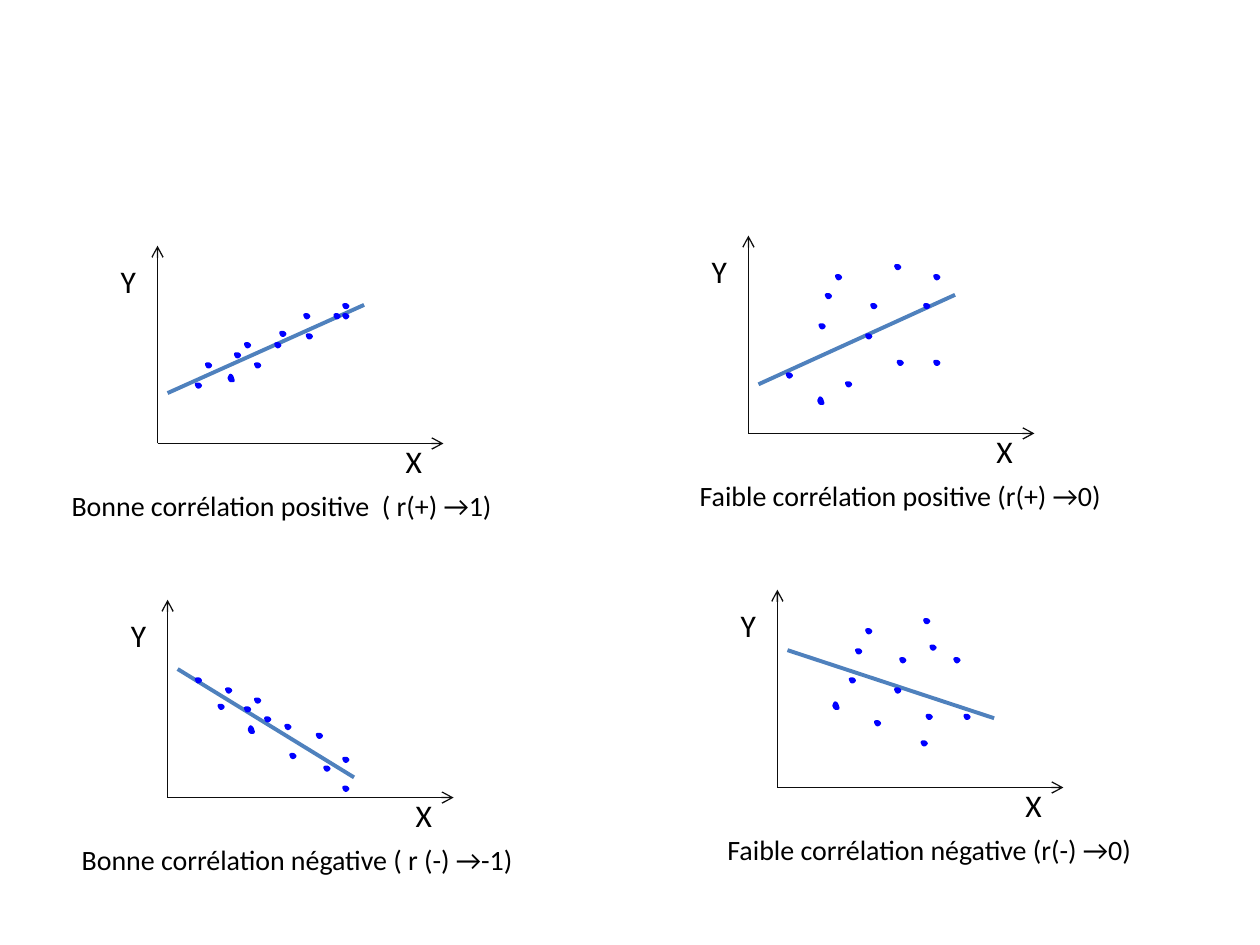
import pptx
import pptx.dml.color
import pptx.enum.shapes
import pptx.enum.text
import pptx.oxml
import pptx.oxml.ns
import pptx.util

Inches = pptx.util.Inches
Pt = pptx.util.Pt
RGB = pptx.dml.color.RGBColor.from_string
Align = pptx.enum.text.PP_ALIGN

theme = {
    "font": "Calibri",
    "text": RGB("000000"),
    "axis": RGB("0D0D0D"),
    "trend": RGB("4F81BD"),
    "dot": RGB("0000FF"),
    "label": Pt(18),
    "note": Pt(16),
    "thin": Pt(0.75),
    "thick": Pt(2.25),
    "edge": Pt(2),
}

deck = pptx.Presentation()
deck.slide_width = Inches(10)
deck.slide_height = Inches(7.5)
slide = deck.slides.add_slide(deck.slide_layouts[6])


def draw_line(start, end, color, width, arrow=False):
    ends = [Inches(n) for n in (*start, *end)]
    line = slide.shapes.add_connector(pptx.enum.shapes.MSO_CONNECTOR.STRAIGHT, *ends)
    line.line.color.rgb = color
    line.line.width = width
    if arrow:
        head = pptx.oxml.parse_xml(
            f'<a:tailEnd {pptx.oxml.ns.nsdecls("a")} type="arrow"/>')
        line.line._get_or_add_ln().append(head)
    line._element.spPr.append(
        pptx.oxml.parse_xml(f'<a:effectLst {pptx.oxml.ns.nsdecls("a")}/>'))


def write(text, left, top, width, height, size, align=Align.LEFT):
    box = slide.shapes.add_textbox(*[Inches(n) for n in (left, top, width, height)])
    frame = box.text_frame
    frame.word_wrap = True
    frame.auto_size = pptx.enum.text.MSO_AUTO_SIZE.SHAPE_TO_FIT_TEXT
    para = frame.paragraphs[0]
    para.alignment = align
    run = para.add_run()
    run.text = text
    run.font.name = theme["font"]
    run.font.size = size
    run.font.color.rgb = theme["text"]


small = [(0, 0), (0.02, 0), (0.03, 0.01), (0.02, 0.02), (0.01, 0.02)]
large = [(0.05, 0.05), (0.03, 0.05), (0.02, 0.03), (0.03, 0.01), (0.04, 0.02)]

plots = [
    {"at": (1.25, 3.52), "trend": ((1.33, 3.12), (2.89, 2.42)),
     "note": "Bonne corrélation positive  ( r(+) →1)",
     "shift": -0.78, "width": 4.3, "align": Align.LEFT, "large": (1.8, 2.97),
     "dots": [(2.42, 2.5), (2.44, 2.66), (2.19, 2.73), (2.73, 2.5),
              (1.87, 2.81), (2.23, 2.64), (1.95, 2.73), (2.03, 2.89),
              (1.64, 2.89), (1.56, 3.05), (2.66, 2.5), (2.73, 2.42)]},
    {"at": (5.94, 3.44), "trend": ((6.02, 3.05), (7.58, 2.34)),
     "note": "Faible corrélation positive (r(+) →0)",
     "shift": -1.1, "width": 4.61, "align": Align.CENTER, "large": (6.48, 3.15),
     "dots": [(7.11, 2.11), (7.13, 2.87), (6.88, 2.66), (7.42, 2.87),
              (6.56, 2.34), (6.92, 2.42), (6.64, 2.19), (6.72, 3.04),
              (6.51, 2.58), (6.25, 2.97), (7.34, 2.42), (7.42, 2.19)]},
    {"at": (1.33, 6.33), "trend": ((2.81, 6.17), (1.41, 5.31)),
     "note": "Bonne corrélation négative ( r (-) →-1)",
     "shift": -0.78, "width": 4.3, "align": Align.LEFT, "large": (1.96, 5.76),
     "dots": [(2.73, 6.25), (2.52, 5.83), (2.27, 5.76), (2.73, 6.02),
              (1.95, 5.62), (2.31, 5.99), (2.03, 5.55), (2.11, 5.7),
              (1.74, 5.6), (1.8, 5.47), (1.56, 5.39), (2.58, 6.09)]},
    {"at": (6.17, 6.25), "trend": ((7.89, 5.7), (6.25, 5.16)),
     "note": "Faible corrélation négative (r(-) →0)",
     "shift": -1.1, "width": 4.61, "align": Align.CENTER, "large": (6.6, 5.57),
     "dots": [(7.34, 4.92), (7.36, 5.68), (7.11, 5.47), (7.66, 5.68),
              (6.8, 5.16), (7.15, 5.23), (6.88, 5), (6.95, 5.73),
              (6.75, 5.39), (7.32, 5.89), (7.58, 5.23), (7.39, 5.13)]},
]

for plot in plots:
    x, y = plot["at"]
    for tip in [(x, y - 1.57), (x + 2.27, y)]:
        draw_line((x, y), tip, theme["axis"], theme["thin"], arrow=True)
    draw_line(*plot["trend"], theme["trend"], theme["thick"])

    marks = [(spot, small) for spot in plot["dots"]] + [(plot["large"], large)]
    for (left, top), outline in marks:
        points = [(Inches(left + dx), Inches(top + dy)) for dx, dy in outline]
        pen = slide.shapes.build_freeform(*points[0])
        pen.add_line_segments(points[1:], close=True)
        dot = pen.convert_to_shape()
        dot.shadow.inherit = False
        dot.fill.solid()
        dot.fill.fore_color.rgb = theme["trend"]
        dot.line.color.rgb = theme["dot"]
        dot.line.width = theme["edge"]

    write("Y", x - 0.39, y - 1.49, 0.31, 0.4, theme["label"])
    write("X", x + 1.87, y - 0.06, 0.31, 0.4, theme["label"])
    write(plot["note"], x + plot["shift"], y + 0.31, plot["width"], 0.37,
          theme["note"], plot["align"])

deck.save("out.pptx")
